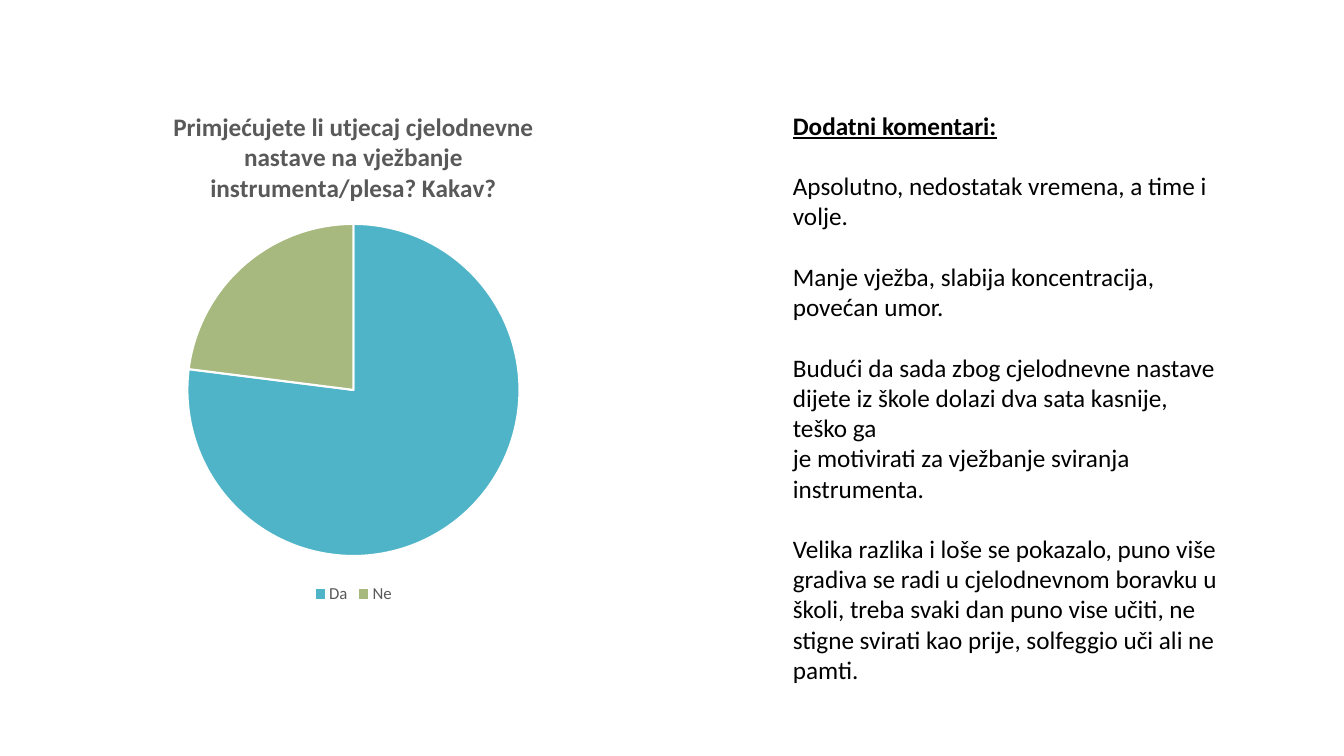
from lxml import etree
from pptx import Presentation
from pptx.chart.data import CategoryChartData
from pptx.dml.color import RGBColor
from pptx.enum.chart import XL_CHART_TYPE, XL_LEGEND_POSITION
from pptx.oxml.ns import qn
from pptx.util import Emu, Pt

PIE = XL_CHART_TYPE.PIE
BOTTOM = XL_LEGEND_POSITION.BOTTOM
SCALE = 914400 / 100.8
FONT = "Calibri"
COLORS = {"text": "000000", "muted": "595959", "line": "FFFFFF",
          "Da": "50B4C8", "Ne": "A8B97F"}
SHARES = {"Da": 77, "Ne": 23}
QUESTION = ("Primjećujete li utjecaj cjelodnevne nastave na vježbanje "
            "instrumenta/plesa? Kakav?")
HEADING = "Dodatni komentari:"
# Each comment is a list of the paragraphs that belong together.
COMMENTS = [
    ["Apsolutno, nedostatak vremena, a time i volje."],
    ["Manje vježba, slabija koncentracija, povećan umor."],
    ["Budući da sada zbog cjelodnevne nastave dijete iz škole dolazi "
     "dva sata kasnije, teško ga",
     "je motivirati za vježbanje sviranja instrumenta."],
    ["Velika razlika i loše se pokazalo, puno više gradiva se radi u "
     "cjelodnevnom boravku u",
     "školi, treba svaki dan puno vise učiti, ne stigne svirati kao prije, "
     "solfeggio uči ali ne",
     "pamti."],
]


def px(*sizes):
    return [Emu(round(size * SCALE)) for size in sizes]


def color(name):
    return RGBColor.from_string(COLORS[name])


def style(font, size, name, bold=False):
    font.name = FONT
    font.size = Pt(size)
    font.bold = bold
    font.color.rgb = color(name)


def place_plot(chart, **box):
    """Fix the inner plot area, in fractions of the chart."""
    plot = chart._chartSpace.chart.plotArea
    for old in plot.findall(qn("c:layout")):
        plot.remove(old)
    layout = etree.Element(qn("c:layout"))
    plot.insert(0, layout)
    manual = etree.SubElement(layout, qn("c:manualLayout"))
    parts = {"layoutTarget": "inner", "xMode": "edge", "yMode": "edge", **box}
    for tag, value in parts.items():
        etree.SubElement(manual, qn("c:" + tag)).set("val", str(value))


def add_pie(slide):
    data = CategoryChartData()
    data.categories = list(SHARES)
    data.add_series("Series 1", list(SHARES.values()))
    chart = slide.shapes.add_chart(PIE, *px(93, 89, 521, 519), data).chart
    style(chart.font, 10, "text")

    chart.has_title = True
    frame = chart.chart_title.text_frame
    frame.text = QUESTION
    style(frame.paragraphs[0].runs[0].font, 18, "muted", True)
    chart.chart_title.include_in_layout = False

    chart.has_legend = True
    chart.legend.position = BOTTOM
    chart.legend.include_in_layout = False
    style(chart.legend.font, 12, "muted")

    plot = chart.plots[0]
    plot.vary_by_categories = True
    for index, name in enumerate(SHARES):
        form = plot.series[0].points[index].format
        form.fill.solid()
        form.fill.fore_color.rgb = color(name)
        form.line.color.rgb = color("line")
        form.line.width = Pt(1.5)
    place_plot(chart, x=0.18, y=0.26, w=0.64, h=0.64)


def add_notes(slide):
    frame = slide.shapes.add_textbox(*px(783, 105, 449, 591)).text_frame
    frame.word_wrap = True
    head = frame.paragraphs[0]
    head.text = HEADING
    style(head.runs[0].font, 18, "text", True)
    head.runs[0].font.underline = True
    for comment in COMMENTS:
        for index, text in enumerate(comment):
            para = frame.add_paragraph()
            para.text = text
            style(para.runs[0].font, 18, "text")
            if index == 0:
                para.space_before = Pt(21.6)


def main():
    deck = Presentation()
    deck.slide_width, deck.slide_height = px(1344, 756)
    slide = deck.slides.add_slide(deck.slide_layouts[6])
    add_pie(slide)
    add_notes(slide)
    deck.save("out.pptx")


if __name__ == "__main__":
    main()
